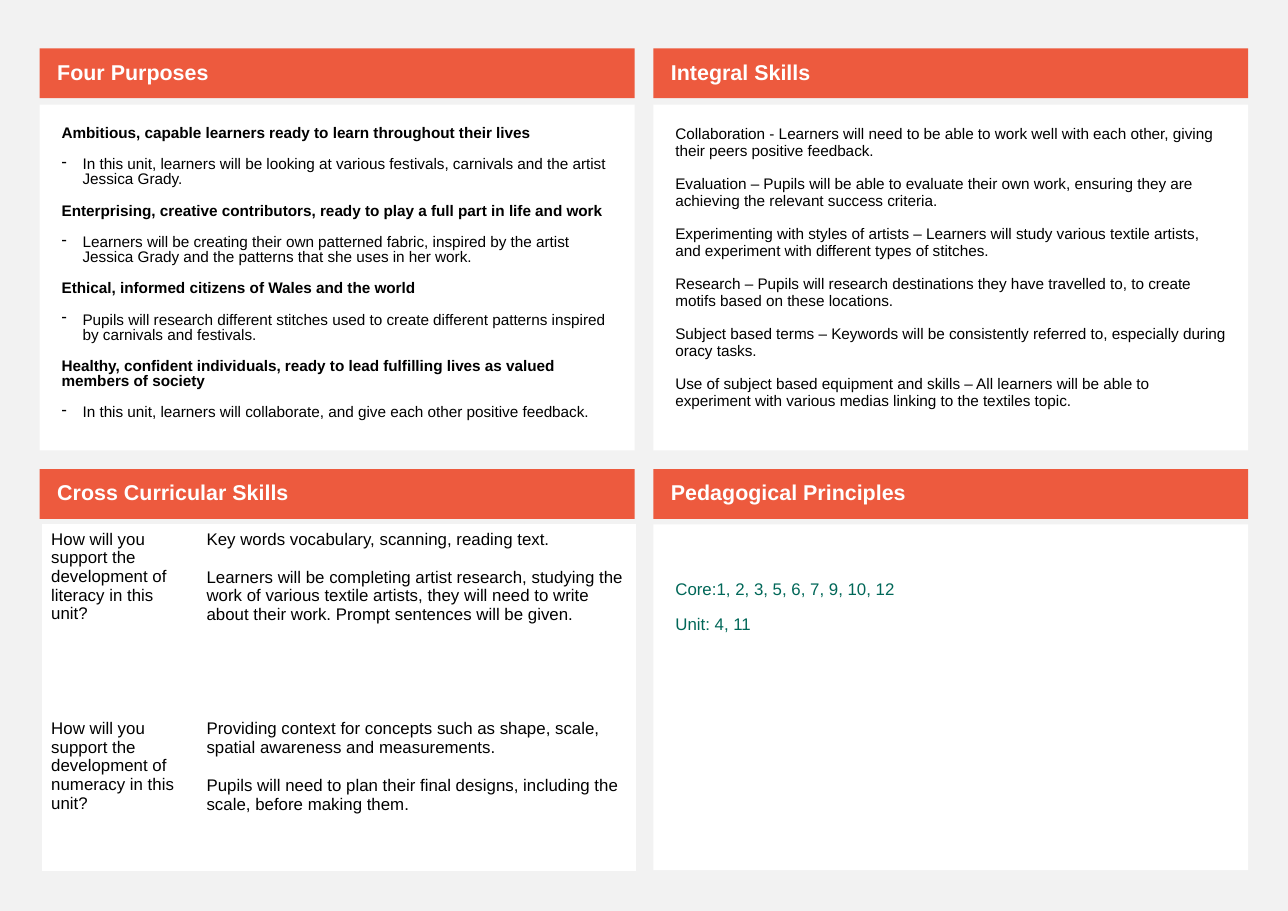
from lxml import etree
from pptx import Presentation
from pptx.dml.color import RGBColor
from pptx.enum.shapes import MSO_SHAPE
from pptx.enum.text import MSO_ANCHOR, PP_ALIGN
from pptx.oxml import parse_xml
from pptx.oxml.ns import nsdecls, qn
from pptx.util import Pt

RECTANGLE = MSO_SHAPE.RECTANGLE
TOP, MIDDLE = MSO_ANCHOR.TOP, MSO_ANCHOR.MIDDLE
LEFT = PP_ALIGN.LEFT

GREY = RGBColor(0xF2, 0xF2, 0xF2)
ORANGE = RGBColor(0xED, 0x5A, 0x3E)
WHITE = RGBColor(0xFF, 0xFF, 0xFF)
BLACK = RGBColor(0x00, 0x00, 0x00)
GREEN = RGBColor(0x00, 0x67, 0x58)

FONT = "Arial"
COLUMN_LEFT = [25.92, 426.96]
HEADER_TOP = [31.68, 306.72]
BODY_TOP = [68.4, 342.72]
PANEL_WIDTH, HEADER_HEIGHT, BODY_HEIGHT = 388.8, 32.4, 226.08
HANGING_INDENT = 13.68

HEADERS = [
    ["Four Purposes", "Integral Skills"],
    ["Cross Curricular Skills", "Pedagogical Principles"],
]
PURPOSES = [
    ("Ambitious, capable learners ready to learn throughout their lives",
     "In this unit, learners will be looking at various festivals, carnivals and the artist Jessica Grady."),
    ("Enterprising, creative contributors, ready to play a full part in life and work",
     "Learners will be creating their own patterned fabric, inspired by the artist Jessica Grady and the patterns that she uses in her work."),
    ("Ethical, informed citizens of Wales and the world",
     "Pupils will research different stitches used to create different patterns inspired by carnivals and festivals."),
    ("Healthy, confident individuals, ready to lead fulfilling lives as valued members of society",
     "In this unit, learners will collaborate, and give each other positive feedback."),
]
SKILLS = [
    "Collaboration - Learners will need to be able to work well with each other, giving their peers positive feedback.",
    "Evaluation – Pupils will be able to evaluate their own work, ensuring they are achieving the relevant success criteria.",
    "Experimenting with styles of artists – Learners will study various textile artists, and experiment with different types of stitches.",
    "Research – Pupils will research destinations they have travelled to, to create motifs based on these locations.",
    "Subject based terms – Keywords will be consistently referred to, especially during oracy tasks.",
    "Use of subject based equipment and skills – All learners will be able to experiment with various medias linking to the textiles topic.",
]
PRINCIPLES = ["Core:1, 2, 3, 5, 6, 7, 9, 10, 12", "Unit: 4, 11"]
CURRICULUM = [
    [["How will you support the development of literacy in this unit?"],
     ["Key words vocabulary, scanning, reading text.",
      "Learners will be completing artist research, studying the work of various textile artists, they will need to write about their work. Prompt sentences will be given."]],
    [["How will you support the development of numeracy in this unit?"],
     ["Providing context for concepts such as shape, scale, spatial awareness and measurements.",
      "Pupils will need to plan their final designs, including the scale, before making them."]],
]


def write_text(frame, lines, size, color, bold=False, spacing=1.0, gap=11):
    frame.text = "\n".join(lines)
    for index, para in enumerate(frame.paragraphs):
        para.alignment = LEFT
        para.line_spacing = spacing
        para.space_before = Pt(gap if index else 0)
        for span in para.runs:
            span.font.name = FONT
            span.font.size = Pt(size)
            span.font.bold = bold
            span.font.color.rgb = color


def add_box(left, top, height, fill, anchor, insets):
    box = page.shapes.add_shape(RECTANGLE, Pt(left), Pt(top), Pt(PANEL_WIDTH), Pt(height))
    box.shadow.inherit = False
    box.fill.solid()
    box.fill.fore_color.rgb = fill
    box.line.fill.background()
    frame = box.text_frame
    frame.word_wrap = True
    frame.vertical_anchor = anchor
    frame.margin_left, frame.margin_top, frame.margin_right, frame.margin_bottom = map(Pt, insets)
    return frame


deck = Presentation()
deck.slide_width, deck.slide_height = Pt(841.68), Pt(595.44)
page = deck.slides.add_slide(deck.slide_layouts[6])
page.background.fill.solid()
page.background.fill.fore_color.rgb = GREY

# Panel headers
for titles, top in zip(HEADERS, HEADER_TOP):
    for title, left in zip(titles, COLUMN_LEFT):
        frame = add_box(left, top, HEADER_HEIGHT, ORANGE, MIDDLE, (11.52, 3.6, 7.2, 3.6))
        write_text(frame, [title], 14, WHITE, bold=True, spacing=0.9)

# Four purposes: bold headings, each with a dashed item
body_insets = (14.4, 14.4, 14.4, 14.4)
frame = add_box(COLUMN_LEFT[0], BODY_TOP[0], BODY_HEIGHT, WHITE, TOP, body_insets)
write_text(frame, [line for pair in PURPOSES for line in pair], 10, BLACK, spacing=0.8)
for heading in frame.paragraphs[::2]:
    heading.runs[0].font.bold = True
for item in frame.paragraphs[1::2]:
    properties = item._p.get_or_add_pPr()
    properties.set("marL", str(Pt(HANGING_INDENT)))
    properties.set("indent", str(-Pt(HANGING_INDENT)))
    etree.SubElement(properties, qn("a:buChar"), char="-")

# Integral skills
frame = add_box(COLUMN_LEFT[1], BODY_TOP[0], BODY_HEIGHT, WHITE, TOP, body_insets)
write_text(frame, SKILLS, 10, BLACK, spacing=0.9)

# Pedagogical principles
frame = add_box(COLUMN_LEFT[1], BODY_TOP[1], BODY_HEIGHT, WHITE, TOP, (14.4, 36.8, 14.4, 14.4))
write_text(frame, PRINCIPLES, 11, GREEN, spacing=0.9)

# Cross curricular skills table
table = page.shapes.add_table(2, 2, Pt(28.08), Pt(BODY_TOP[1]), Pt(387.36), Pt(BODY_HEIGHT)).table
table.first_row = table.horz_banding = False
for column, width in zip(table.columns, [101.52, 285.84]):
    column.width = Pt(width)
for row, height, contents in zip(table.rows, [123.84, 102.24], CURRICULUM):
    row.height = Pt(height)
    for cell, lines in zip(row.cells, contents):
        cell.margin_left = cell.margin_right = Pt(5.4)
        cell.margin_top = cell.margin_bottom = Pt(3.6)
        cell.fill.solid()
        cell.fill.fore_color.rgb = WHITE
        write_text(cell.text_frame, lines, 11, BLACK, gap=12.65)
        for position, side in enumerate(["lnL", "lnR", "lnT", "lnB"]):
            border = parse_xml(
                f'<a:{side} {nsdecls("a")} w="{Pt(0.75)}"><a:solidFill>'
                f'<a:srgbClr val="{WHITE}"/></a:solidFill></a:{side}>')
            cell._tc.get_or_add_tcPr().insert(position, border)

deck.save("out.pptx")
